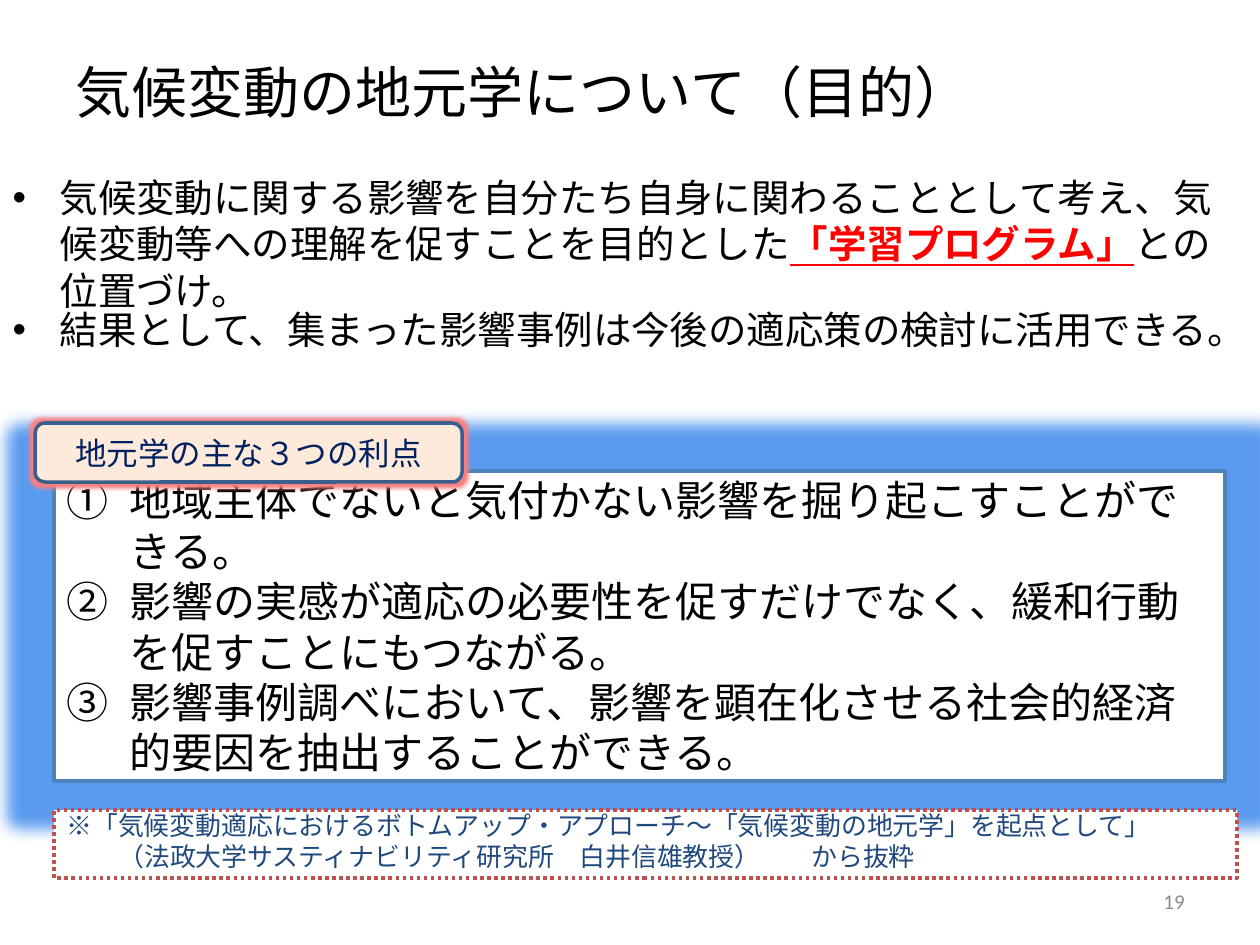
from dataclasses import dataclass
from typing import Optional

from lxml import etree
from pptx import Presentation
from pptx.dml.color import RGBColor
from pptx.enum.dml import MSO_LINE
from pptx.enum.shapes import MSO_SHAPE
from pptx.enum.text import MSO_ANCHOR, MSO_AUTO_SIZE, PP_ALIGN
from pptx.oxml.ns import qn
from pptx.util import Emu, Pt

RECTANGLE, ROUNDED = MSO_SHAPE.RECTANGLE, MSO_SHAPE.ROUNDED_RECTANGLE
TOP, MIDDLE, BOTTOM = MSO_ANCHOR.TOP, MSO_ANCHOR.MIDDLE, MSO_ANCHOR.BOTTOM
LEFT, CENTER, RIGHT = PP_ALIGN.LEFT, PP_ALIGN.CENTER, PP_ALIGN.RIGHT
DOTTED = MSO_LINE.ROUND_DOT
NO_AUTOFIT = MSO_AUTO_SIZE.NONE

EMU_PER_PX = 914400 // 126 + 1
SLIDE_SIZE = (9144000, 6858000)
LATIN, JAPANESE = "Calibri", "Noto Sans CJK JP"
COLORS = {
    "black": "000000",
    "white": "FFFFFF",
    "emphasis": "FF0000",
    "frame": "4F81BD",
    "frame_glow": "5B9BEF",
    "label": "FDEADA",
    "label_line": "3A5F8C",
    "label_glow": "FA8080",
    "label_text": "002060",
    "note_line": "C0504D",
    "note_text": "1F497D",
    "page": "8C8C8C",
}


@dataclass(frozen=True)
class Box:
    left: int
    top: int
    width: int
    height: int


@dataclass(frozen=True)
class TextStyle:
    size: float
    font: str
    color: str = "black"
    anchor: MSO_ANCHOR = MIDDLE
    align: PP_ALIGN = LEFT


@dataclass(frozen=True)
class Span:
    text: str
    emphasized: bool = False


@dataclass(frozen=True)
class Line:
    spans: tuple[Span, ...]
    margin: int = 0
    hanging: int = 0
    spacing: float = 1.0
    bullet: Optional[str] = None
    numbering: Optional[str] = None
    tab: Optional[int] = None


@dataclass(frozen=True)
class Panel:
    box: Box
    kind: MSO_SHAPE
    fill: str
    outline: str
    style: TextStyle
    lines: tuple[Line, ...]
    glow: Optional[str] = None
    glow_radius: int = 0
    dash: Optional[MSO_LINE] = None


def px(length: int) -> Emu:
    return Emu(length * EMU_PER_PX)


def rgb(name: str) -> RGBColor:
    return RGBColor.from_string(COLORS[name])


def place(shape, box: Box) -> None:
    shape.left, shape.top = px(box.left), px(box.top)
    shape.width, shape.height = px(box.width), px(box.height)


def add_run(paragraph, span: Span, style: TextStyle) -> None:
    run = paragraph.add_run()
    run.text = span.text
    font = run.font
    font.size, font.name = Pt(style.size), style.font
    font.color.rgb = rgb("emphasis" if span.emphasized else style.color)
    if span.emphasized:
        font.bold = font.underline = True
    if style.font == JAPANESE:
        east_asian = etree.SubElement(run._r.get_or_add_rPr(), qn("a:ea"))
        east_asian.set("typeface", JAPANESE)


def format_paragraph(paragraph, line: Line, style: TextStyle) -> None:
    paragraph.alignment = style.align
    paragraph.line_spacing = line.spacing
    paragraph.space_before = Pt(0)
    properties = paragraph._p.get_or_add_pPr()
    properties.set("marL", str(px(line.margin)))
    properties.set("indent", str(-px(line.hanging)))
    if line.bullet:
        etree.SubElement(properties, qn("a:buFont")).set("typeface", "Arial")
        etree.SubElement(properties, qn("a:buChar")).set("char", line.bullet)
    elif line.numbering:
        etree.SubElement(properties, qn("a:buAutoNum")).set("type", line.numbering)
    else:
        etree.SubElement(properties, qn("a:buNone"))
    if line.tab:
        tabs = etree.SubElement(properties, qn("a:tabLst"))
        etree.SubElement(tabs, qn("a:tab"), pos=str(px(line.tab)), algn="l")


def write_text(shape, lines: tuple[Line, ...], style: TextStyle) -> None:
    frame = shape.text_frame
    frame.word_wrap = True
    frame.auto_size = NO_AUTOFIT
    frame.vertical_anchor = style.anchor
    for index, line in enumerate(lines):
        paragraph = frame.add_paragraph() if index else frame.paragraphs[0]
        format_paragraph(paragraph, line, style)
        for span in line.spans:
            add_run(paragraph, span, style)


def add_glow(shape, color: str, radius: int) -> None:
    effects = shape._element.spPr.find(qn("a:effectLst"))
    glow = etree.SubElement(effects, qn("a:glow"), rad=str(px(radius)))
    etree.SubElement(glow, qn("a:srgbClr"), val=COLORS[color])


def add_panel(slide, panel: Panel) -> None:
    shape = slide.shapes.add_shape(panel.kind, 0, 0, 0, 0)
    place(shape, panel.box)
    shape.shadow.inherit = False
    shape.fill.solid()
    shape.fill.fore_color.rgb = rgb(panel.fill)
    shape.line.color.rgb = rgb(panel.outline)
    shape.line.width = Pt(2)
    if panel.dash:
        shape.line.dash_style = panel.dash
    if panel.glow:
        add_glow(shape, panel.glow, panel.glow_radius)
    write_text(shape, panel.lines, panel.style)


TITLE = (Line((Span("気候変動の地元学について（目的）"),)),)
PURPOSES = (
    Line((
        Span("気候変動に関する影響を自分たち自身に関わることとして考え、気候変動等への理解を促すことを目的とした"),
        Span("「学習プログラム」", True),
        Span("との位置づけ。"),
    ), 47, 47, bullet="•"),
    Line((Span("結果として、集まった影響事例は今後の適応策の検討に活用できる。"),),
         47, 47, 0.85, bullet="•"),
)
BENEFITS = tuple(
    Line((Span(text),), 63, 63, numbering="circleNumDbPlain")
    for text in (
        "地域主体でないと気付かない影響を掘り起こすことができる。",
        "影響の実感が適応の必要性を促すだけでなく、緩和行動を促すことにもつながる。",
        "影響事例調べにおいて、影響を顕在化させる社会的経済的要因を抽出することができる。",
    )
)
SOURCE = (
    Line((Span("※「気候変動適応におけるボトムアップ・アプローチ～「気候変動の地元学」を起点として」"),)),
    Line((Span("（法政大学サスティナビリティ研究所　白井信雄教授）\tから抜粋"),), 52, tab=746),
)
PANELS = (
    Panel(Box(54, 471, 1171, 310), RECTANGLE, "white", "frame",
          TextStyle(24, LATIN), BENEFITS, "frame_glow", 30),
    Panel(Box(35, 423, 427, 59), ROUNDED, "label", "label_line",
          TextStyle(18, JAPANESE, "label_text", align=CENTER),
          (Line((Span("地元学の主な３つの利点"),)),), "label_glow", 8),
    Panel(Box(54, 810, 1183, 68), RECTANGLE, "white", "note_line",
          TextStyle(14.8, LATIN, "note_text", BOTTOM), SOURCE, dash=DOTTED),
)


def main() -> None:
    presentation = Presentation()
    presentation.slide_width, presentation.slide_height = SLIDE_SIZE
    slide = presentation.slides.add_slide(presentation.slide_layouts[1])
    title, body = slide.placeholders
    place(title, Box(63, 38, 1134, 107))
    write_text(title, TITLE, TextStyle(32, LATIN))
    place(body, Box(0, 168, 1239, 255))
    write_text(body, PURPOSES, TextStyle(22, JAPANESE, anchor=TOP))
    for panel in PANELS:
        add_panel(slide, panel)
    page_number = slide.shapes.add_textbox(0, 0, 0, 0)
    place(page_number, Box(903, 876, 294, 50))
    write_text(page_number, (Line((Span("19"),)),),
               TextStyle(12, LATIN, "page", align=RIGHT))
    presentation.save("out.pptx")


if __name__ == "__main__":
    main()
